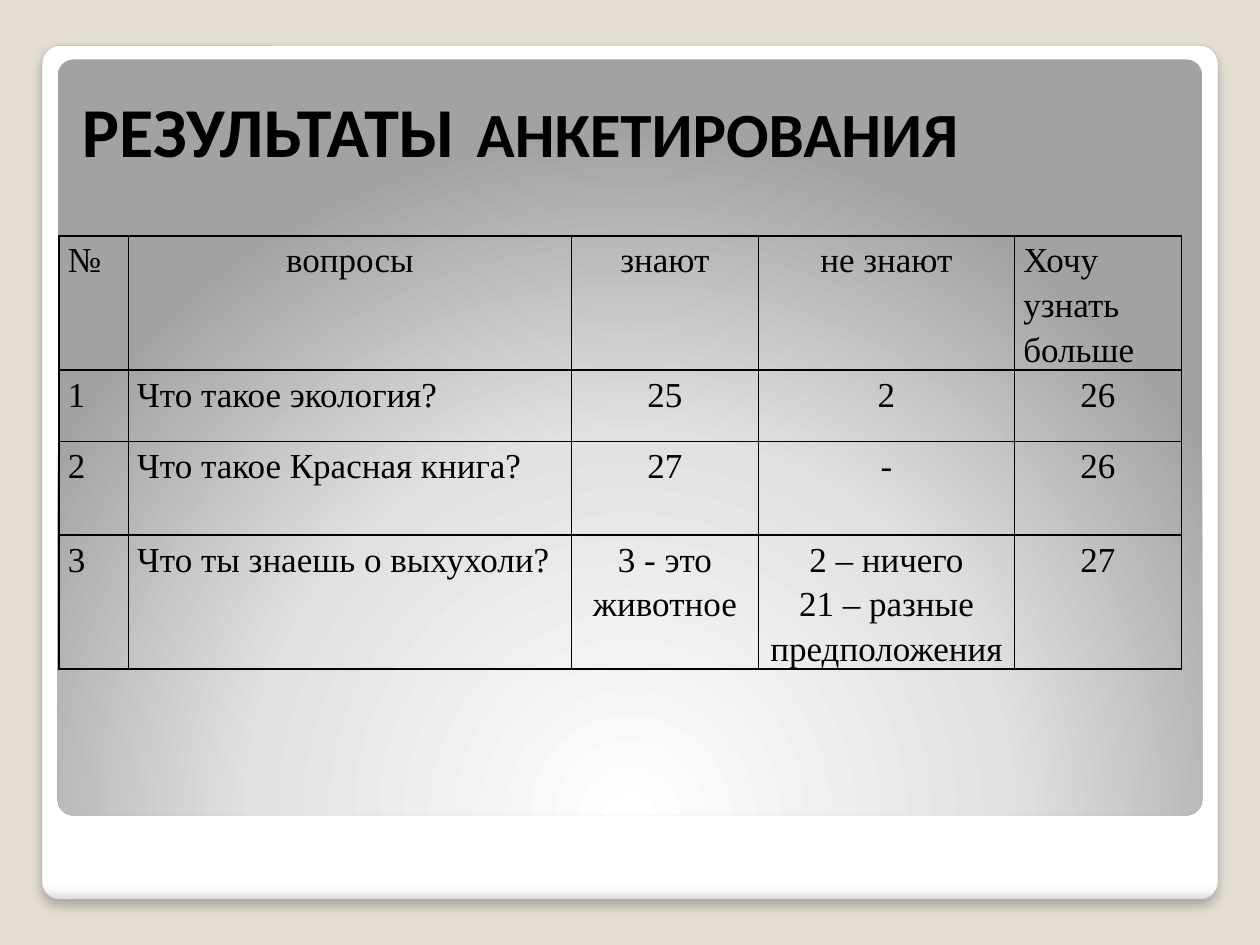
from dataclasses import dataclass
from typing import Optional

from lxml.etree import SubElement as Sub
from pptx import Presentation
from pptx.dml.color import RGBColor
from pptx.enum.shapes import MSO_SHAPE as Shape
from pptx.enum.text import MSO_ANCHOR as Anchor, MSO_AUTO_SIZE as Fit, PP_ALIGN as Align
from pptx.oxml import parse_xml
from pptx.oxml.ns import nsdecls, qn
from pptx.util import Pt

INK = {"back": "E3DED1", "text": "000000", "edge": "A4A4A4", "white": "FFFFFF",
       "pale": "F7F7F7", "rim": "DADADA", "light": "E1E1E1", "gray": "A2A2A2"}
LINEAR = '<a:lin ang="5400000" scaled="0"/>'
RADIAL = ('<a:path path="circle"><a:fillToRect l="50000" t="175000" '
          'r="50000" b="-75000"/></a:path>')


@dataclass
class Panel:
    box: tuple[float, float, float, float]
    stops: list[tuple[int, str]]
    shade: str
    edge: Optional[str] = None


PANELS = [
    Panel((24, 26, 672, 488), [(0, "white"), (98, "white"), (99, "pale"), (100, "rim")],
          LINEAR, "edge"),
    Panel((33, 34, 654, 432), [(0, "white"), (55, "light"), (100, "gray")], RADIAL),
]
TITLE = [("РЕЗУЛЬТАТЫ", 40, "Calibri"), (" ", 36, "DejaVu Sans"),
         ("АНКЕТИРОВАНИЯ", 36, "Calibri")]
COLS = [39.6, 253.2, 106.8, 146.4, 95.4]
ROWS = [76.6, 41, 53.4, 76.6]
DATA = [
    ["№", "вопросы", "знают", "не знают", "Хочу узнать больше"],
    ["1", "Что такое экология?", "25", "2", "26"],
    ["2", "Что такое Красная книга?", "27", "-", "26"],
    ["3", "Что ты знаешь о выхухоли?", "3 - это животное",
     "2 – ничего\n21 – разные предположения", "27"],
]
LEFT = {(0, 0), (0, 4)} | {(r, c) for r in (1, 2, 3) for c in (0, 1)}


def color(name: str) -> RGBColor:
    return RGBColor.from_string(INK[name])


def draw_panel(slide, panel: Panel) -> None:
    shape = slide.shapes.add_shape(Shape.ROUNDED_RECTANGLE, *map(Pt, panel.box))
    shape.adjustments[0] = 0.021
    shape.shadow.inherit = False
    stops = "".join(f'<a:gs pos="{pos * 1000}"><a:srgbClr val="{INK[name]}"/></a:gs>'
                    for pos, name in panel.stops)
    props = shape._element.spPr
    props.insert(2, parse_xml(f'<a:gradFill {nsdecls("a")} rotWithShape="1">'
                              f'<a:gsLst>{stops}</a:gsLst>{panel.shade}</a:gradFill>'))
    if not panel.edge:
        shape.line.fill.background()
        return
    shape.line.color.rgb = color(panel.edge)
    shape.line.width = Pt(0.16)
    cast = Sub(props.find(qn("a:effectLst")), qn("a:outerShdw"), blurRad=str(Pt(6)),
               dist=str(Pt(4)), dir="5400000", algn="t", rotWithShape="0")
    tint = Sub(cast, qn("a:srgbClr"), val=INK["text"])
    Sub(tint, qn("a:alpha"), val="25000")


def draw_title(slide) -> None:
    title = slide.shapes.title
    title.left, title.top, title.width, title.height = map(Pt, (39.6, 39.6, 644.4, 62))
    frame = title.text_frame
    frame.auto_size = Fit.NONE
    frame.vertical_anchor = Anchor.BOTTOM
    para = frame.paragraphs[0]
    para.alignment = Align.LEFT
    para.font.bold = True
    para.font.color.rgb = color("text")
    for text, size, face in TITLE:
        run = para.add_run()
        run.text = text
        run.font.size, run.font.name = Pt(size), face
        run.font.bold = True
        run.font.color.rgb = color("text")
    slide.shapes._spTree.append(title._element)  # bring above the panels


def fill_cell(cell, text: str, align: Align) -> None:
    cell.fill.background()
    cell.margin_left = cell.margin_right = Pt(5)
    cell.margin_top = cell.margin_bottom = 0
    cell.text = text
    for para in cell.text_frame.paragraphs:
        para.alignment = align
        para.line_spacing = 1.15
        font = para.font
        font.size, font.name, font.bold = Pt(20), "Times New Roman", False
        font.color.rgb = color("text")
    props = cell._tc.get_or_add_tcPr()
    for i, side in enumerate("LRTB"):
        props.insert(i, parse_xml(
            f'<a:ln{side} {nsdecls("a")} w="{Pt(1)}"><a:solidFill>'
            f'<a:srgbClr val="{INK["text"]}"/></a:solidFill></a:ln{side}>'))


def draw_table(slide) -> None:
    table = slide.shapes.add_table(len(ROWS), len(COLS), Pt(33.8), Pt(134.8),
                                   Pt(sum(COLS)), Pt(sum(ROWS))).table
    table.first_row = table.horz_banding = False
    for col, width in zip(table.columns, COLS):
        col.width = Pt(width)
    for r, (row, height) in enumerate(zip(table.rows, ROWS)):
        row.height = Pt(height)
        for c, text in enumerate(DATA[r]):
            fill_cell(table.cell(r, c), text, Align.LEFT if (r, c) in LEFT else Align.CENTER)


def main() -> None:
    deck = Presentation()
    deck.slide_width, deck.slide_height = Pt(720), Pt(540)
    slide = deck.slides.add_slide(deck.slide_layouts[5])
    slide.background.fill.solid()
    slide.background.fill.fore_color.rgb = color("back")
    # Framed backdrop
    for panel in PANELS:
        draw_panel(slide, panel)
    # Heading and survey results
    draw_title(slide)
    draw_table(slide)
    deck.save("out.pptx")


if __name__ == "__main__":
    main()
